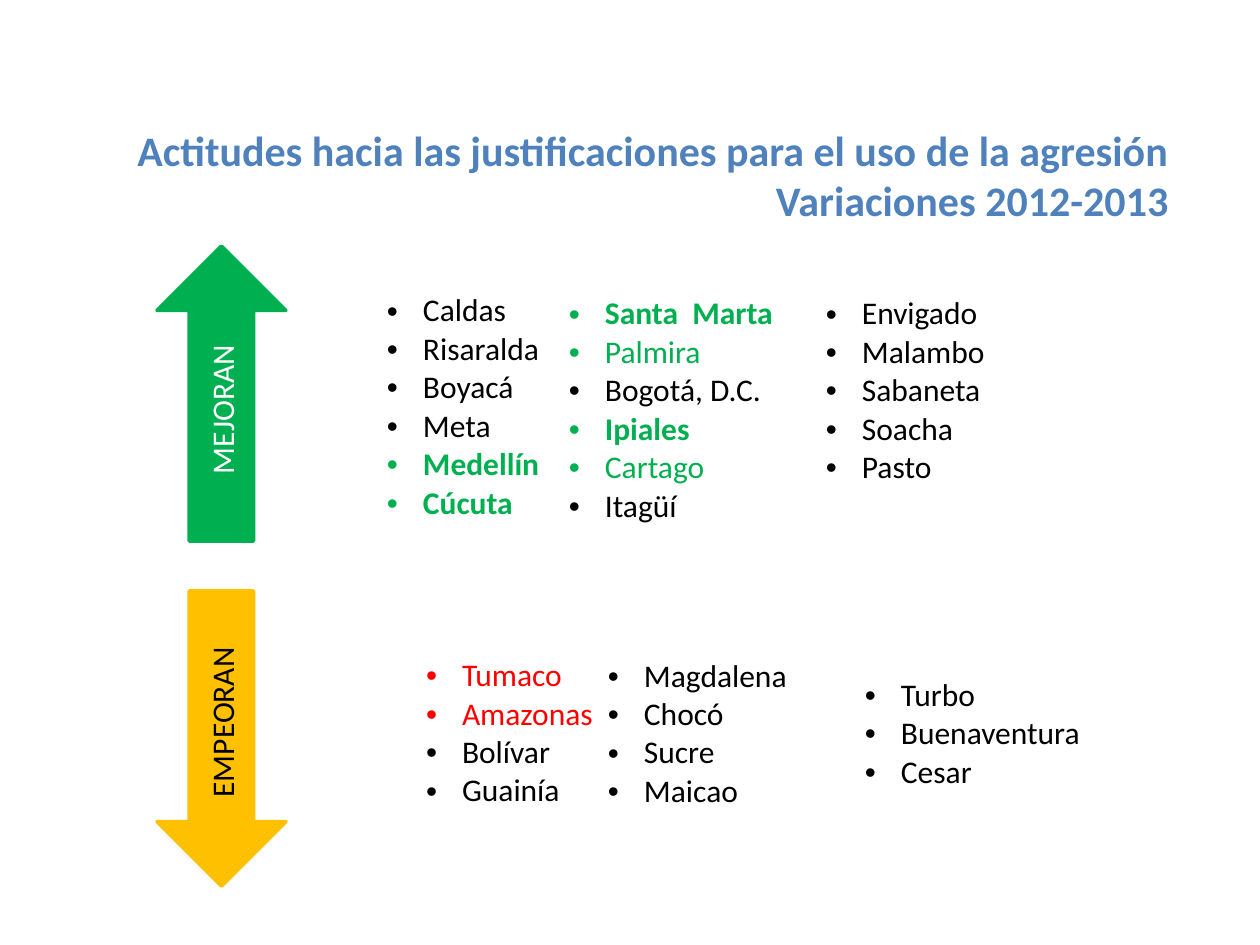
from lxml import etree
from pptx import Presentation
from pptx.dml.color import RGBColor
from pptx.enum.shapes import MSO_SHAPE
from pptx.enum.text import MSO_ANCHOR, PP_ALIGN
from pptx.oxml.ns import qn
from pptx.util import Emu, Pt

UP_ARROW = MSO_SHAPE.UP_ARROW
TOP, MIDDLE = MSO_ANCHOR.TOP, MSO_ANCHOR.MIDDLE
CENTER, RIGHT = PP_ALIGN.CENTER, PP_ALIGN.RIGHT

FONT = "Calibri"
BLACK, WHITE, BLUE = "000000", "FFFFFF", "4F81BD"
GREEN, AMBER, RED = "00B050", "FFC000", "FF0000"
PLAIN, GOOD, BEST, BAD = (BLACK, False), (GREEN, False), (GREEN, True), (RED, False)

TITLE = "Actitudes hacia las justificaciones para el uso de la agresión\vVariaciones 2012-2013"
ARROWS = [
    ("MEJORAN", 246, 0, "vert270", GREEN, WHITE),
    ("EMPEORAN", 591, 180, "vert", AMBER, BLACK),
]
IMPROVING = [
    [("Caldas", PLAIN), ("Risaralda", PLAIN), ("Boyacá", PLAIN),
     ("Meta", PLAIN), ("Medellín", BEST), ("Cúcuta", BEST)],
    [("Santa  Marta", BEST), ("Palmira", GOOD), ("Bogotá, D.C.", PLAIN),
     ("Ipiales", BEST), ("Cartago", GOOD), ("Itagüí", PLAIN)],
    [("Envigado", PLAIN), ("Malambo", PLAIN), ("Sabaneta", PLAIN),
     ("Soacha", PLAIN), ("Pasto", PLAIN)],
]
WORSENING = [
    [("Tumaco", BAD), ("Amazonas", BAD), ("Bolívar", PLAIN), ("Guainía", PLAIN)],
    [("Magdalena", PLAIN), ("Chocó", PLAIN), ("Sucre", PLAIN), ("Maicao", PLAIN)],
    [("Turbo", PLAIN), ("Buenaventura", PLAIN), ("Cesar", PLAIN)],
]
TABLES = [
    (IMPROVING, 374, 286, 239, TOP, (6, 9, 9)),
    (WORSENING, 413, 630, 207, MIDDLE, (0, 1, 1)),
]
COLUMN_WIDTHS = (194, 257, 257)
LEFT_MARGINS = (13, 1, 1)
BULLET_INDENT = 36


def px(value):
    return Emu(round(value * 914400 / 126))


def color(value):
    return RGBColor.from_string(value)


def style(paragraph, size, text_color, bold=False):
    for run in paragraph.runs:
        run.font.name = FONT
        run.font.size = Pt(size)
        run.font.bold = bold
        run.font.color.rgb = color(text_color)


def add_title(slide):
    box = slide.shapes.add_textbox(px(105), px(118), px(1076), px(115))
    box.text_frame.word_wrap = True
    box.text_frame.text = TITLE
    paragraph = box.text_frame.paragraphs[0]
    paragraph.alignment = RIGHT
    style(paragraph, 24, BLUE, True)


def add_arrow(slide, label, top, rotation, direction, fill, text_color):
    arrow = slide.shapes.add_shape(UP_ARROW, px(157), px(top), px(129), px(295))
    arrow.rotation = rotation
    arrow.shadow.inherit = False
    arrow.fill.solid()
    arrow.fill.fore_color.rgb = color(fill)
    arrow.line.color.rgb = color(fill)
    arrow.line.width = Pt(2)
    frame = arrow.text_frame
    frame.text = label
    frame.vertical_anchor = MIDDLE
    frame._txBody.bodyPr.set("vert", direction)
    frame.paragraphs[0].alignment = CENTER
    style(frame.paragraphs[0], 18, text_color)


def add_bullet(paragraph, bullet_color):
    properties = paragraph._p.get_or_add_pPr()
    properties.set("marL", str(px(BULLET_INDENT)))
    properties.set("indent", str(-px(BULLET_INDENT)))
    color_element = etree.SubElement(properties, qn("a:buClr"))
    etree.SubElement(color_element, qn("a:srgbClr"), val=bullet_color)
    etree.SubElement(properties, qn("a:buFont"), typeface="Arial")
    etree.SubElement(properties, qn("a:buChar"), char="•")


def fill_cell(cell, places):
    cell.text_frame.text = "\n".join(name for name, _ in places)
    for paragraph, (_, (text_color, bold)) in zip(cell.text_frame.paragraphs, places):
        add_bullet(paragraph, text_color)
        style(paragraph, 18, text_color, bold)


def add_places(slide, columns, left, top, height, anchor, top_margins):
    frame = slide.shapes.add_table(
        1, len(columns), px(left), px(top), px(sum(COLUMN_WIDTHS)), px(height))
    table = frame.table
    table.first_row = table.horz_banding = False
    table.rows[0].height = px(height)
    for index, places in enumerate(columns):
        table.columns[index].width = px(COLUMN_WIDTHS[index])
        cell = table.cell(0, index)
        cell.fill.background()
        cell.vertical_anchor = anchor
        cell.margin_left = px(LEFT_MARGINS[index])
        cell.margin_top = px(top_margins[index])
        cell.margin_right = cell.margin_bottom = 0
        fill_cell(cell, places)


def main():
    """Build the slide on changes in attitudes and save it."""
    presentation = Presentation()
    presentation.slide_width, presentation.slide_height = px(1260), px(945)
    slide = presentation.slides.add_slide(presentation.slide_layouts[6])
    add_title(slide)
    for arrow in ARROWS:
        add_arrow(slide, *arrow)
    for table in TABLES:
        add_places(slide, *table)
    presentation.save("out.pptx")


if __name__ == "__main__":
    main()
